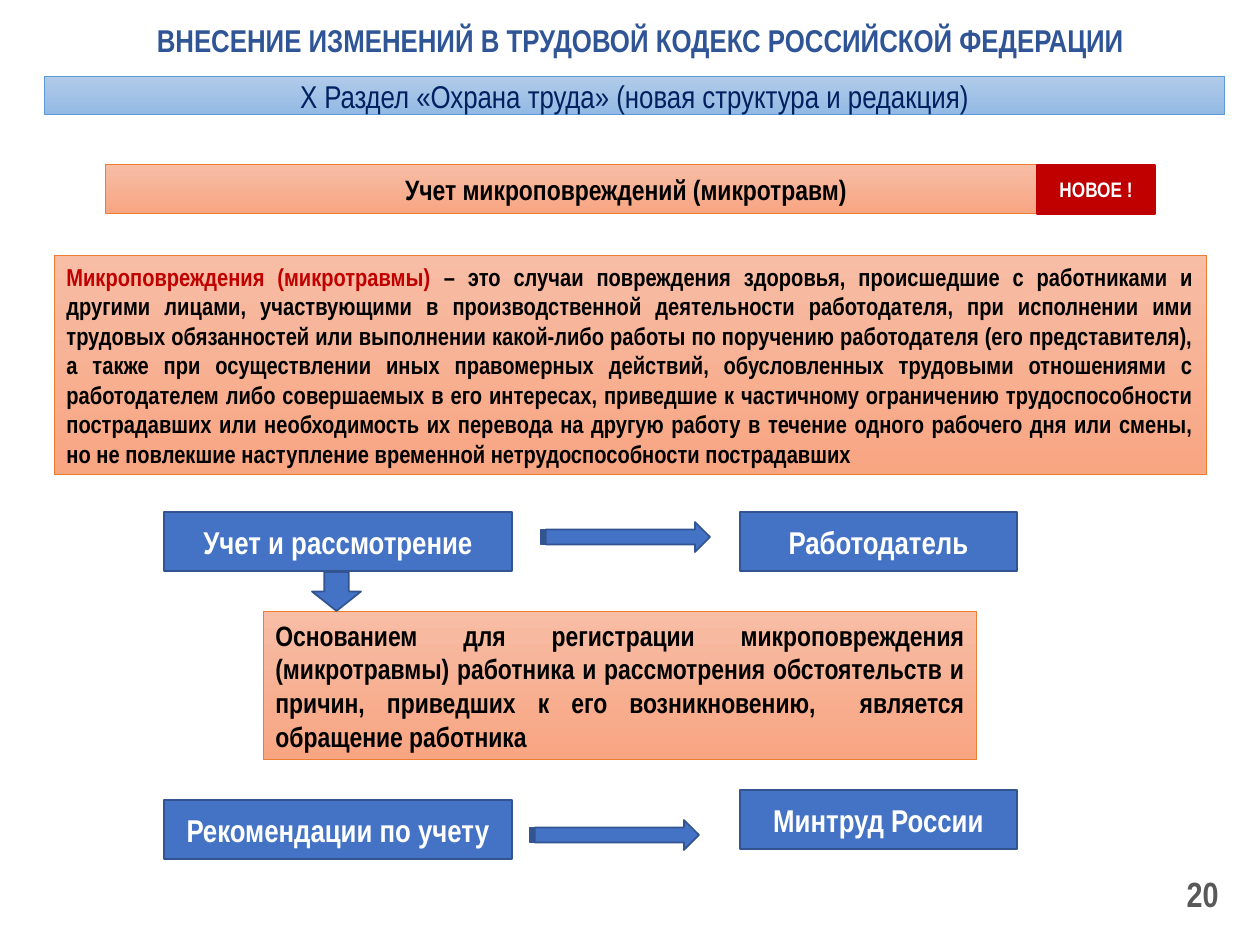
from dataclasses import dataclass

from pptx import Presentation
from pptx.dml.color import RGBColor
from pptx.enum.shapes import MSO_SHAPE as Preset
from pptx.enum.text import MSO_ANCHOR as Anchor, PP_ALIGN as Align
from pptx.shapes.autoshape import Shape
from pptx.shapes.shapetree import SlideShapes
from pptx.util import Emu, Pt

EMU_PER_PX = 914400 / 126
FONT = "Arial Narrow"
COLORS = {
    "white": "FFFFFF",
    "black": "000000",
    "title": "2F5597",
    "navy": "002060",
    "number": "595959",
    "red": "C00000",
    "blue": "4472C4",
    "blue_edge": "325491",
    "orange_top": "F7BDA5",
    "orange_bottom": "F8A582",
    "orange_edge": "ED7D31",
    "sky_top": "B1CBE9",
    "sky_bottom": "93B9E4",
    "sky_edge": "5B9BD5",
}


@dataclass(frozen=True)
class Area:
    left: int
    top: int
    width: int
    height: int

    def emu(self) -> tuple[Emu, ...]:
        return tuple(px(n) for n in (self.left, self.top, self.width, self.height))


@dataclass(frozen=True)
class Look:
    """One fill colour is solid, two make a gradient from top to bottom."""
    fill: tuple[str, ...]
    edge: str
    edge_width: float = 1


@dataclass(frozen=True)
class Label:
    phrases: tuple[tuple[str, str], ...]  # (text, colour) pairs
    size: int
    align: Align = Align.CENTER
    bold: bool = True


@dataclass(frozen=True)
class Panel:
    area: Area
    look: Look
    label: Label


ORANGE = Look(("orange_top", "orange_bottom"), "orange_edge", 0.5)
SKY = Look(("sky_top", "sky_bottom"), "sky_edge", 0.5)
BLUE = Look(("blue",), "blue_edge")
RED = Look(("red",), "red")

TITLE = Label((("ВНЕСЕНИЕ ИЗМЕНЕНИЙ В ТРУДОВОЙ КОДЕКС РОССИЙСКОЙ ФЕДЕРАЦИИ", "title"),), 18)
PAGE_NUMBER = Label((("20", "number"),), 20, Align.RIGHT)
SECTION = Label((("Х Раздел «Охрана труда» (новая структура и редакция)", "navy"),), 18, bold=False)
TOPIC = Label((("Учет микроповреждений (микротравм)", "black"),), 16)
NEW_MARK = Label((("НОВОЕ !", "white"),), 12)
DEFINITION = Label((
    ("Микроповреждения (микротравмы)", "red"),
    (" – это случаи повреждения здоровья, происшедшие с работниками и другими лицами, "
     "участвующими в производственной деятельности работодателя, при исполнении ими "
     "трудовых обязанностей или выполнении какой-либо работы по поручению работодателя "
     "(его представителя), а также при осуществлении иных правомерных действий, "
     "обусловленных трудовыми отношениями с работодателем либо совершаемых в его "
     "интересах, приведшие к частичному ограничению трудоспособности пострадавших или "
     "необходимость их перевода на другую работу в течение одного рабочего дня или смены, "
     "но не повлекшие наступление временной нетрудоспособности пострадавших", "black"),
), 14, Align.JUSTIFY)
GROUNDS = Label((
    ("Основанием для регистрации микроповреждения (микротравмы) работника и рассмотрения "
     "обстоятельств и причин, приведших к его возникновению,  является обращение "
     "работника", "black"),
), 16, Align.JUSTIFY)

TOPIC_TOP, TOPIC_HEIGHT = 165, 49
TASK_LEFT, TASK_WIDTH = 164, 348
OWNER_LEFT, OWNER_WIDTH = 740, 277
STEP_HEIGHT = 59


def step(left: int, top: int, width: int, text: str) -> Panel:
    return Panel(Area(left, top, width, STEP_HEIGHT), BLUE, Label(((text, "white"),), 18))


PANELS = (
    Panel(Area(105, TOPIC_TOP, 1042, TOPIC_HEIGHT), ORANGE, TOPIC),
    step(TASK_LEFT, 512, TASK_WIDTH, "Учет и рассмотрение"),
    step(OWNER_LEFT, 512, OWNER_WIDTH, "Работодатель"),
    step(TASK_LEFT, 800, TASK_WIDTH, "Рекомендации по учету"),
    step(OWNER_LEFT, 790, OWNER_WIDTH, "Минтруд России"),
    Panel(Area(263, 611, 714, 149), ORANGE, GROUNDS),
    Panel(Area(54, 255, 1152, 220), ORANGE, DEFINITION),
    Panel(Area(44, 76, 1181, 39), SKY, SECTION),
    Panel(Area(1037, TOPIC_TOP, 118, TOPIC_HEIGHT), RED, NEW_MARK),
)
ARROWS = (
    (Preset.STRIPED_RIGHT_ARROW, Area(541, 522, 169, 30)),
    (Preset.STRIPED_RIGHT_ARROW, Area(530, 820, 169, 30)),
    (Preset.DOWN_ARROW, Area(312, 572, 49, 39)),
)


def px(length: int) -> Emu:
    return Emu(round(length * EMU_PER_PX))


def rgb(name: str) -> RGBColor:
    return RGBColor.from_string(COLORS[name])


def write_label(holder: Shape, label: Label) -> None:
    frame = holder.text_frame
    frame.word_wrap = True
    frame.vertical_anchor = Anchor.MIDDLE
    paragraph = frame.paragraphs[0]
    paragraph.alignment = label.align
    for text, color in label.phrases:
        run = paragraph.add_run()
        run.text = text
        run.font.name = FONT
        run.font.size = Pt(label.size)
        run.font.bold = label.bold
        run.font.color.rgb = rgb(color)


def add_text(shapes: SlideShapes, area: Area, label: Label) -> None:
    write_label(shapes.add_textbox(*area.emu()), label)


def add_preset(shapes: SlideShapes, preset: Preset, area: Area, look: Look) -> Shape:
    shape = shapes.add_shape(preset, *area.emu())
    shape.shadow.inherit = False
    if len(look.fill) == 1:
        shape.fill.solid()
        shape.fill.fore_color.rgb = rgb(look.fill[0])
    else:
        shape.fill.gradient()
        shape.fill.gradient_angle = 270
        for stop, color in zip(shape.fill.gradient_stops, look.fill):
            stop.color.rgb = rgb(color)
    shape.line.color.rgb = rgb(look.edge)
    shape.line.width = Pt(look.edge_width)
    return shape


def main() -> None:
    deck = Presentation()
    deck.slide_width, deck.slide_height = px(1260), px(945)
    shapes = deck.slides.add_slide(deck.slide_layouts[6]).shapes
    add_text(shapes, Area(937, 869, 294, 50), PAGE_NUMBER)
    add_text(shapes, Area(105, 0, 1071, 79), TITLE)
    for panel in PANELS:
        write_label(add_preset(shapes, Preset.RECTANGLE, panel.area, panel.look), panel.label)
    for preset, area in ARROWS:
        add_preset(shapes, preset, area, BLUE)
    deck.save("out.pptx")


if __name__ == "__main__":
    main()
